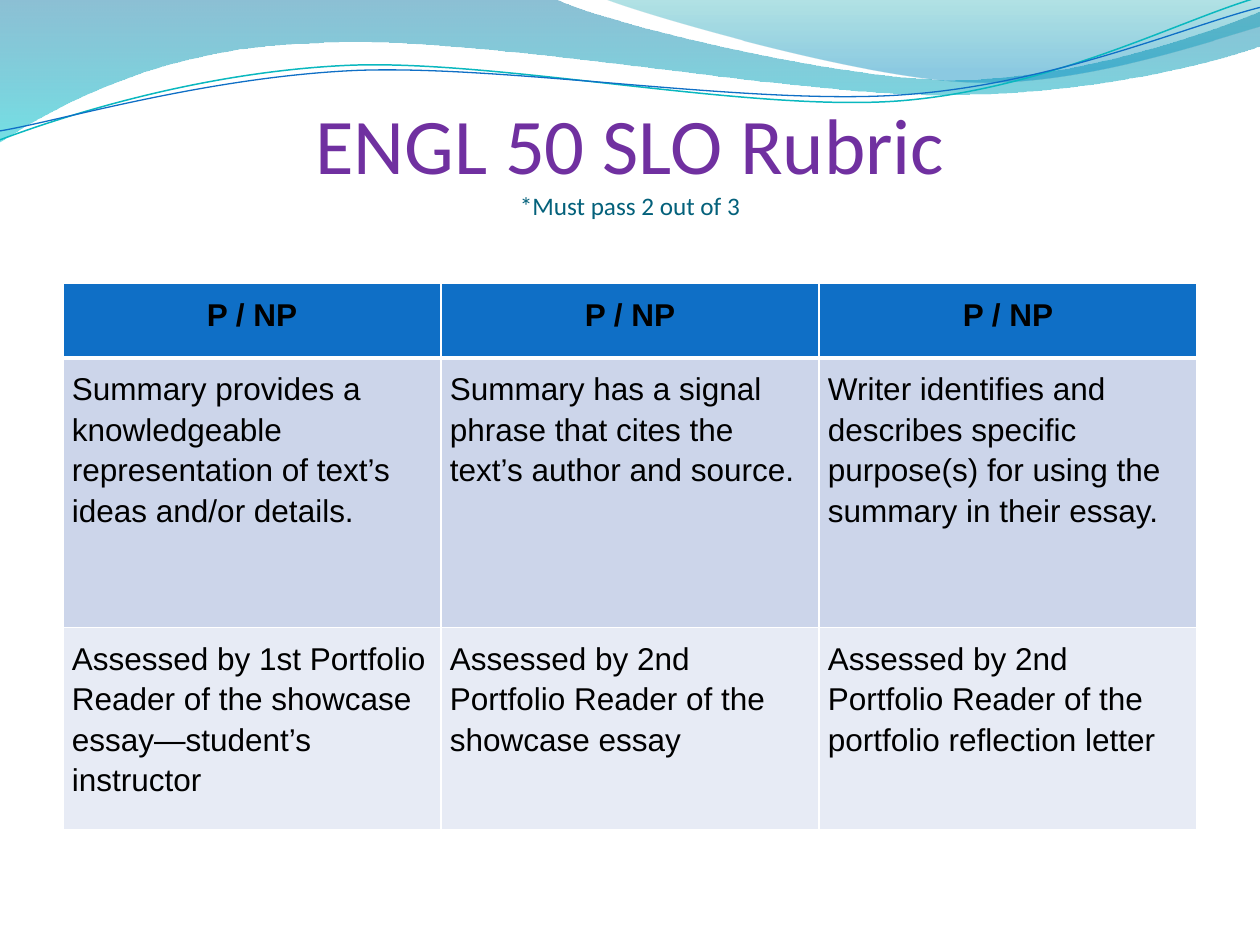
"""Builds the ENGL 50 SLO rubric slide."""
from lxml import etree
from pptx import Presentation
from pptx import util as u
from pptx.dml.color import RGBColor
from pptx.enum import text
from pptx.oxml import ns

WHITE = RGBColor(0xFF, 0xFF, 0xFF)
BLACK = RGBColor(0, 0, 0)
PURPLE = RGBColor(0x70, 0x30, 0xA0)
DARK_TEAL = RGBColor(0x04, 0x61, 0x7B)
BLUE = RGBColor(0x0F, 0x6F, 0xC6)
TEAL = RGBColor(0x0A, 0xB8, 0xBF)
ROW_FILLS = [BLUE, RGBColor(0xCC, 0xD5, 0xEA), RGBColor(0xE7, 0xEB, 0xF5)]
BACK_STOPS = [(0, RGBColor(0, 0x74, 0xA1), 45), (1, RGBColor(0, 0xC6, 0xCF), 55)]
FRONT_STOPS = [(0, RGBColor(0, 0xA1, 0xA9), 30), (0.8, RGBColor(0, 0x8B, 0xBF), 45)]

BACK_WAVE = [
    [(0, 0)], [(11.18, -0.03)],
    [(12.09, 0.43), (16.87, 1.6), (19.25, 1.6)],
    [(21.67, 1.6), (24.33, 0.66), (25.4, 0.23)],
    [(25.43, 0.91)],
    [(24.97, 1.12), (22.1, 1.93), (18.95, 1.91)],
    [(15.8, 1.91), (9.7, 0.71), (6.53, 0.86)],
    [(3.28, 0.91), (1.17, 2.11), (-0.03, 2.87)],
    [(0, 0)],
]
FRONT_WAVE = [
    [(12.17, -0.03)],
    [(12.93, 0.28), (17.32, 1.57), (19.53, 1.65)],
    [(21.74, 1.75), (24.41, 0.81), (25.4, 0.53)],
    [(25.4, 0)], [(12.17, -0.03)],
]
TEAL_CURVE = [
    [(-0.05, 2.22)],
    [(1.19, 1.82), (4.02, 1.04), (7.05, 1.05)],
    [(10.05, 1.07), (15.02, 2.37), (18.08, 2.29)],
    [(21.13, 2.2), (23.87, 0.91), (25.41, 0.55)],
]
BLUE_CURVE = [
    [(-0.04, 2.04)],
    [(1.16, 1.9), (4.18, 1.15), (7.2, 1.16)],
    [(10.25, 1.19), (15.13, 2.25), (18.19, 2.17)],
    [(21.21, 2.1), (23.93, 1.06), (25.45, 0.75)],
]
RUBRIC = [
    ["P / NP"] * 3,
    ["Summary provides a knowledgeable representation of text’s ideas and/or details.",
     "Summary has a signal phrase that cites the text’s author and source.",
     "Writer identifies and describes specific purpose(s) for using the summary in their essay."],
    ["Assessed by 1st Portfolio Reader of the showcase essay—student’s instructor",
     "Assessed by 2nd Portfolio Reader of the showcase essay",
     "Assessed by 2nd Portfolio Reader of the portfolio reflection letter"],
]


def add_text(paragraph, wording, *, font, size, color, bold=False, align=None, spacing=None):
    run = paragraph.add_run()
    run.text = wording
    run.font.name, run.font.size, run.font.bold = font, u.Pt(size), bold
    run.font.color.rgb = color
    paragraph.alignment = align
    paragraph.line_spacing = spacing


class RubricSlide:
    def __init__(self, slide):
        self.slide = slide
        self.title_style = dict(font="Calibri", align=text.PP_ALIGN.CENTER)
        self.cell_style = dict(font="Arial", size=18, color=BLACK, spacing=1.15)

    def outline(self, segments, close):
        start, *points = [(u.Cm(x), u.Cm(y)) for segment in segments for x, y in segment]
        builder = self.slide.shapes.build_freeform(*start)
        builder.add_line_segments(points, close=close)
        shape = builder.convert_to_shape()
        shape.shadow.inherit = False
        lines = iter(list(shape._element.iter(ns.qn("a:lnTo"))))
        for segment in segments[1:]:
            parts = [next(lines) for _ in segment]
            if len(parts) == 3:
                bezier = etree.Element(ns.qn("a:cubicBezTo"))
                parts[0].addprevious(bezier)
                for part in parts:
                    bezier.append(part[0])
                    part.getparent().remove(part)
        return shape

    def wave(self, segments, stops):
        shape = self.outline(segments, close=True)
        shape.line.fill.background()
        shape.fill.gradient()
        shape.fill.gradient_angle = 270
        for stop, (position, color, _) in zip(shape.fill.gradient_stops, stops):
            stop.position, stop.color.rgb = position, color
        colors = shape._element.spPr.iter(ns.qn("a:srgbClr"))
        for element, (_, _, opacity) in zip(colors, stops):
            etree.SubElement(element, ns.qn("a:alpha"), val=str(opacity * 1000))

    def curve(self, segments, color, width):
        shape = self.outline(segments, close=False)
        shape.rotation = 357.3
        shape.fill.background()
        shape.line.color.rgb, shape.line.width = color, u.Pt(width)

    def title(self, heading, note):
        shape = self.slide.shapes.add_textbox(u.Cm(1.27), u.Cm(1.96), u.Cm(22.86), u.Cm(2.49))
        frame = shape.text_frame
        frame.word_wrap = True
        frame.vertical_anchor = text.MSO_ANCHOR.BOTTOM
        frame.margin_left = frame.margin_right = frame.margin_bottom = 0
        paragraph = frame.paragraphs[0]
        add_text(paragraph, heading, size=45, color=PURPLE, **self.title_style)
        paragraph.add_line_break()
        add_text(paragraph, note, size=14.4, color=DARK_TEAL, **self.title_style)

    def borders(self, cell, top, bottom):
        properties = cell._tc.get_or_add_tcPr()
        for index, (side, width) in enumerate(zip("LRTB", (1, 1, top, bottom))):
            line = etree.Element(ns.qn(f"a:ln{side}"), w=str(u.Pt(width)))
            fill = etree.SubElement(line, ns.qn("a:solidFill"))
            etree.SubElement(fill, ns.qn("a:srgbClr"), val=str(WHITE))
            properties.insert(index, line)

    def table(self, rows, heights):
        table = self.slide.shapes.add_table(
            len(rows), len(rows[0]), u.Cm(1.27), u.Cm(5.72),
            u.Cm(22.86), u.Cm(sum(heights))).table
        for row, (wordings, height) in enumerate(zip(rows, heights)):
            table.rows[row].height = u.Cm(height)
            header = row == 0
            for column, wording in enumerate(wordings):
                cell = table.cell(row, column)
                cell.margin_left = cell.margin_right = u.Cm(0.18)
                cell.margin_top = cell.margin_bottom = u.Cm(0.18)
                cell.fill.solid()
                cell.fill.fore_color.rgb = ROW_FILLS[row]
                self.borders(cell, top=3 if row == 1 else 1, bottom=3 if header else 1)
                add_text(cell.text_frame.paragraphs[0], wording, bold=header,
                         align=text.PP_ALIGN.CENTER if header else text.PP_ALIGN.LEFT,
                         **self.cell_style)


def main():
    presentation = Presentation()
    presentation.slide_width, presentation.slide_height = u.Cm(25.4), u.Cm(19.05)
    rubric = RubricSlide(presentation.slides.add_slide(presentation.slide_layouts[6]))
    rubric.wave(BACK_WAVE, BACK_STOPS)
    rubric.wave(FRONT_WAVE, FRONT_STOPS)
    rubric.curve(TEAL_CURVE, TEAL, 0.85)
    rubric.curve(BLUE_CURVE, BLUE, 0.75)
    rubric.title("ENGL 50 SLO Rubric", "*Must pass 2 out of 3")
    rubric.table(RUBRIC, heights=[1.5, 5.43, 4.08])
    presentation.save("out.pptx")


if __name__ == "__main__":
    main()
